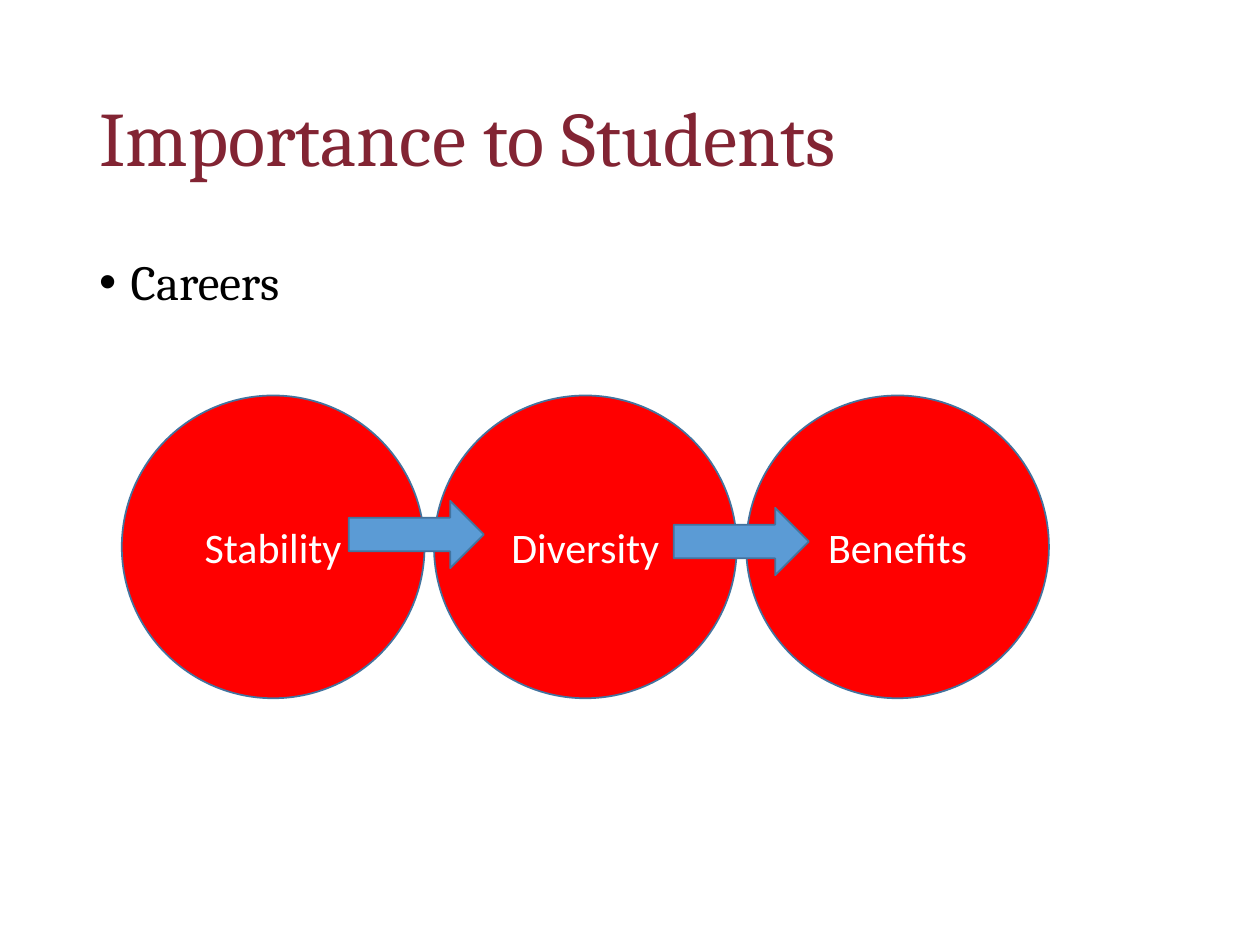
from lxml import etree
from pptx import Presentation
from pptx import util as u
from pptx.dml.color import RGBColor
from pptx.enum import shapes, text
from pptx.oxml.ns import qn

TITLE = "Importance to Students"
BULLETS = ["Careers"]
BENEFITS = ["Stability", "Diversity", "Benefits"]

THEME = {
    "heading_font": "Cambria", "label_font": "Calibri",
    "title_size": 44, "body_size": 28, "label_size": 24,
    "title": "822433", "body": "000000", "label": "FFFFFF",
    "circle": "FF0000", "arrow": "5B9BD5", "outline": "43739E",
}

MARGIN, CONTENT_WIDTH = 49.5, 621
TITLE_TOP, TITLE_HEIGHT = 28.75, 104.4
BODY_TOP, BODY_HEIGHT = 143.75, 342.6
CIRCLE_LEFT, CIRCLE_TOP, CIRCLE_SIZE, CIRCLE_PITCH = 69.6, 226, 173, 178.4
ARROW_SIZE = (77.2, 38.5)
ARROW_POSITIONS = [(199.3, 286.2), (385, 290.2)]
INDENT = 18


def place(shape, left, top, width, height):
    shape.left, shape.top = u.Pt(left), u.Pt(top)
    shape.width, shape.height = u.Pt(width), u.Pt(height)


def format_text(paragraph, font_name, size, color):
    for run in paragraph.runs:
        run.font.name = font_name
        run.font.size = u.Pt(size)
        run.font.color.rgb = RGBColor.from_string(color)


def add_bullet(paragraph):
    properties = paragraph._p.get_or_add_pPr()
    properties.set("marL", str(u.Pt(INDENT)))
    properties.set("indent", str(-u.Pt(INDENT)))
    etree.SubElement(properties, qn("a:buFont"), typeface="Arial")
    etree.SubElement(properties, qn("a:buChar"), char="•")


def add_figure(slide, kind, left, top, width, height, fill):
    shape = slide.shapes.add_shape(kind, u.Pt(left), u.Pt(top), u.Pt(width), u.Pt(height))
    shape.shadow.inherit = False
    shape.fill.solid()
    shape.fill.fore_color.rgb = RGBColor.from_string(fill)
    shape.line.color.rgb = RGBColor.from_string(THEME["outline"])
    shape.line.width = u.Pt(1)
    return shape


def fill_placeholders(slide):
    title, body = slide.shapes.title, slide.placeholders[1]
    place(title, MARGIN, TITLE_TOP, CONTENT_WIDTH, TITLE_HEIGHT)
    title.text_frame.text = TITLE
    title.text_frame.vertical_anchor = text.MSO_ANCHOR.MIDDLE
    heading = title.text_frame.paragraphs[0]
    heading.alignment = text.PP_ALIGN.LEFT
    heading.line_spacing = 0.9
    format_text(heading, THEME["heading_font"], THEME["title_size"], THEME["title"])

    place(body, MARGIN, BODY_TOP, CONTENT_WIDTH, BODY_HEIGHT)
    body.text_frame.text = "\n".join(BULLETS)
    for index, paragraph in enumerate(body.text_frame.paragraphs):
        add_bullet(paragraph)
        paragraph.line_spacing = 0.9
        paragraph.space_before = u.Pt(10 if index else 0)
        format_text(paragraph, THEME["heading_font"], THEME["body_size"], THEME["body"])


def add_circles(slide):
    for index, label in enumerate(BENEFITS):
        circle = add_figure(slide, shapes.MSO_SHAPE.OVAL, CIRCLE_LEFT + index * CIRCLE_PITCH,
                            CIRCLE_TOP, CIRCLE_SIZE, CIRCLE_SIZE, THEME["circle"])
        circle.text_frame.text = label
        circle.text_frame.vertical_anchor = text.MSO_ANCHOR.MIDDLE
        paragraph = circle.text_frame.paragraphs[0]
        paragraph.alignment = text.PP_ALIGN.CENTER
        format_text(paragraph, THEME["label_font"], THEME["label_size"], THEME["label"])


def main():
    presentation = Presentation()
    presentation.slide_width, presentation.slide_height = u.Pt(720), u.Pt(540)
    slide = presentation.slides.add_slide(presentation.slide_layouts[1])
    fill_placeholders(slide)
    add_circles(slide)
    for left, top in ARROW_POSITIONS:
        add_figure(slide, shapes.MSO_SHAPE.RIGHT_ARROW, left, top, *ARROW_SIZE, THEME["arrow"])
    presentation.save("out.pptx")


if __name__ == "__main__":
    main()
